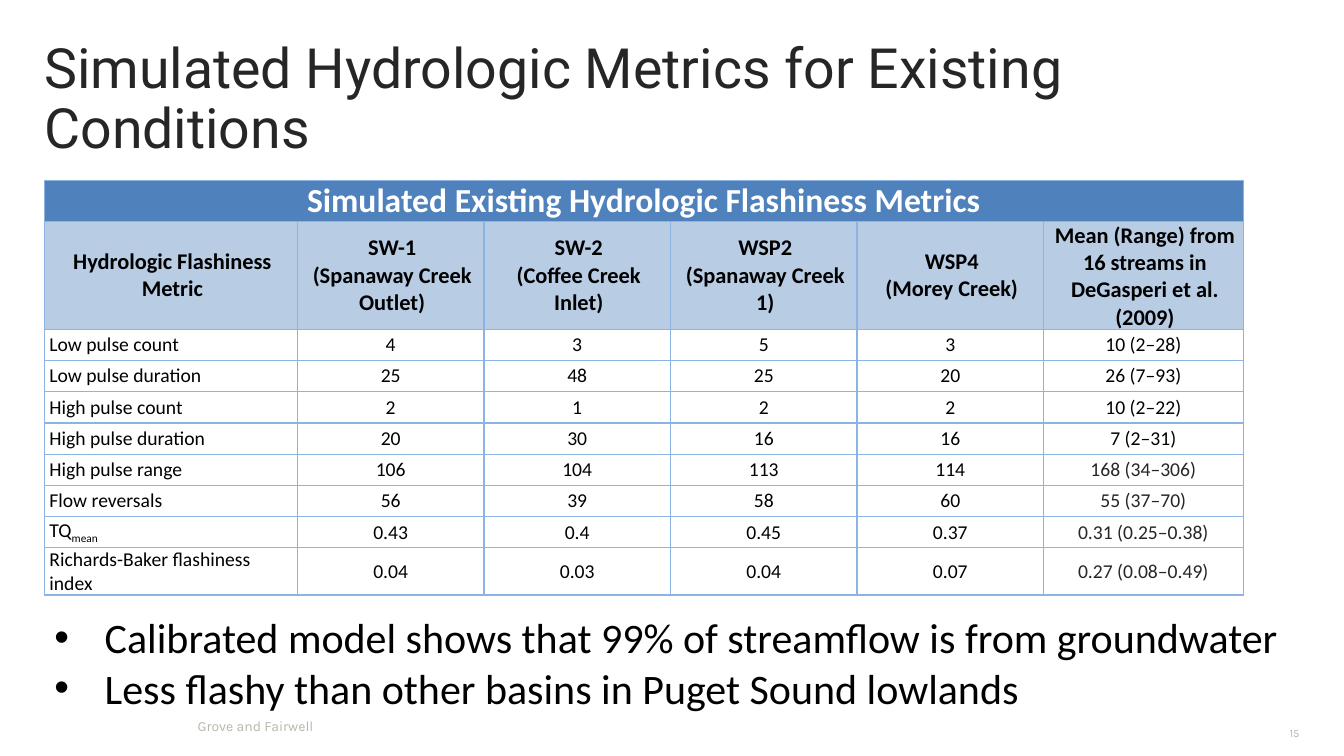
from lxml import etree
from pptx import Presentation
from pptx.dml.color import RGBColor
from pptx.enum.text import MSO_ANCHOR, PP_ALIGN
from pptx.oxml import ns
from pptx.util import Inches, Pt

COLORS = {
    "ink": "262626",
    "black": "000000",
    "white": "FFFFFF",
    "muted": "B7B7A9",
    "banner": "4F81BD",
    "header": "B8CCE4",
    "border": "8DB3E2",
}
LEFT, WIDTH = 0.44, 12.58
COLUMN_WIDTHS = [2.51, 1.85, 1.85, 1.85, 1.85, 1.98]
BANNER_HEIGHT, HEADER_HEIGHT, ROW_HEIGHT = 0.41, 1.02, 0.31
BANNER = "Simulated Existing Hydrologic Flashiness Metrics"
HEADERS = [
    "Hydrologic Flashiness Metric",
    "SW-1\v(Spanaway Creek Outlet)",
    "SW-2\v(Coffee Creek Inlet)",
    "WSP2\v(Spanaway Creek 1)",
    "WSP4\v(Morey Creek)",
    "Mean (Range) from 16 streams in DeGasperi et al. (2009)",
]
METRICS = [
    ["Low pulse count", "4", "3", "5", "3", "10 (2–28)"],
    ["Low pulse duration", "25", "48", "25", "20", "26 (7–93)"],
    ["High pulse count", "2", "1", "2", "2", "10 (2–22)"],
    ["High pulse duration", "20", "30", "16", "16", "7 (2–31)"],
    ["High pulse range", "106", "104", "113", "114", "168 (34–306)"],
    ["Flow reversals", "56", "39", "58", "60", "55 (37–70)"],
    ["TQ", "0.43", "0.4", "0.45", "0.37", "0.31 (0.25–0.38)"],
    ["Richards-Baker flashiness index", "0.04", "0.03", "0.04", "0.07", "0.27 (0.08–0.49)"],
]
SUBSCRIPTS = {"TQ": "mean"}
FIRST_GRAY_RANGE = 4
FINDINGS = [
    "Calibrated model shows that 99% of streamflow is from groundwater",
    "Less flashy than other basins in Puget Sound lowlands",
]


def rgb(name):
    return RGBColor.from_string(COLORS[name])


def style(para, face, size, color, bold=False):
    for span in para.runs:
        font = span.font
        font.name, font.size, font.bold = face, Pt(size), bold
        font.color.rgb = rgb(color)


def add_text_frame(page, left, top, width, height, side_inset=0.0):
    box = page.shapes.add_textbox(Inches(left), Inches(top), Inches(width), Inches(height))
    frame = box.text_frame
    frame.word_wrap = True
    frame.margin_left = frame.margin_right = Inches(side_inset)
    return frame


def add_line(page, left, top, width, height, words, face, size, color, align=PP_ALIGN.LEFT):
    """Add one vertically centred paragraph and return it."""
    frame = add_text_frame(page, left, top, width, height)
    frame.vertical_anchor = MSO_ANCHOR.MIDDLE
    para = frame.paragraphs[0]
    para.text = words
    para.alignment = align
    style(para, face, size, color)
    return para


def add_borders(cell):
    properties = cell._tc.get_or_add_tcPr()
    for side in ("lnL", "lnR", "lnT", "lnB"):
        line = etree.SubElement(properties, ns.qn(f"a:{side}"), w=str(Pt(1)))
        fill = etree.SubElement(line, ns.qn("a:solidFill"))
        etree.SubElement(fill, ns.qn("a:srgbClr"), val=COLORS["border"])


def fill_cell(cell, words, size, color, fill=None, bold=False, align=PP_ALIGN.CENTER):
    """Write and format a table cell; return its paragraph."""
    add_borders(cell)
    if fill:
        cell.fill.solid()
        cell.fill.fore_color.rgb = rgb(fill)
    else:
        cell.fill.background()
    cell.margin_left = cell.margin_right = Inches(0.05)
    cell.margin_top = cell.margin_bottom = 0
    cell.vertical_anchor = MSO_ANCHOR.MIDDLE
    para = cell.text_frame.paragraphs[0]
    para.text = words
    para.alignment = align
    style(para, "Calibri", size, color, bold)
    return para


def add_subscript(para, words, size, color):
    span = para.add_run()
    span.text = words
    style(para, "Calibri", size, color)
    span.font._element.set("baseline", "-25000")


def add_metrics_table(page, left, top):
    heights = [BANNER_HEIGHT, HEADER_HEIGHT] + [ROW_HEIGHT] * len(METRICS)
    frame = page.shapes.add_table(
        len(heights), len(COLUMN_WIDTHS), Inches(left), Inches(top),
        Inches(sum(COLUMN_WIDTHS)), Inches(sum(heights)))
    table = frame.table
    table.horz_banding = False
    for column, width in zip(table.columns, COLUMN_WIDTHS):
        column.width = Inches(width)
    for row, height in zip(table.rows, heights):
        row.height = Inches(height)

    last = len(COLUMN_WIDTHS) - 1
    table.cell(0, 0).merge(table.cell(0, last))
    fill_cell(table.cell(0, 0), BANNER, 24, "white", "banner", bold=True)
    for cell in list(table.rows[0].cells)[1:]:
        add_borders(cell)
    for column, words in enumerate(HEADERS):
        para = fill_cell(table.cell(1, column), words, 16, "black", "header", bold=True)
        para._p.get_or_add_pPr().set("marL", str(Inches(0.03)))
    for index, values in enumerate(METRICS):
        for column, words in enumerate(values):
            gray = column == last and index >= FIRST_GRAY_RANGE
            para = fill_cell(
                table.cell(index + 2, column), words, 14, "ink" if gray else "black",
                align=PP_ALIGN.CENTER if column else PP_ALIGN.LEFT)
            if words in SUBSCRIPTS:
                add_subscript(para, SUBSCRIPTS[words], 14, "black")


def add_findings(page, left, top, width, height):
    frame = add_text_frame(page, left, top, width, height, side_inset=0.1)
    frame.text = "\n".join(FINDINGS)
    for para in frame.paragraphs:
        properties = para._p.get_or_add_pPr()
        properties.set("marL", str(Inches(0.5)))
        properties.set("indent", str(Inches(-0.5)))
        etree.SubElement(properties, ns.qn("a:buFont"), typeface="Arial")
        etree.SubElement(properties, ns.qn("a:buChar"), char="•")
        style(para, "Calibri", 30, "black")


def main():
    deck = Presentation()
    deck.slide_width, deck.slide_height = Inches(13.33), Inches(7.5)
    page = deck.slides.add_slide(deck.slide_layouts[6])
    title = add_line(page, LEFT, 0.5, WIDTH, 1,
                     "Simulated Hydrologic Metrics for Existing Conditions", "Roboto", 39.6, "ink")
    title.line_spacing = 0.9
    add_line(page, 1.96, 7.09, 8.83, 0.23, "Grove and Fairwell", "Karla", 10, "muted")
    add_line(page, 12.33, 7.15, 0.56, 0.25, "15", "Karla", 8, "muted", PP_ALIGN.RIGHT)
    add_metrics_table(page, LEFT, 1.79)
    add_findings(page, LEFT, 6.02, WIDTH, 1.11)
    deck.save("out.pptx")


if __name__ == "__main__":
    main()
